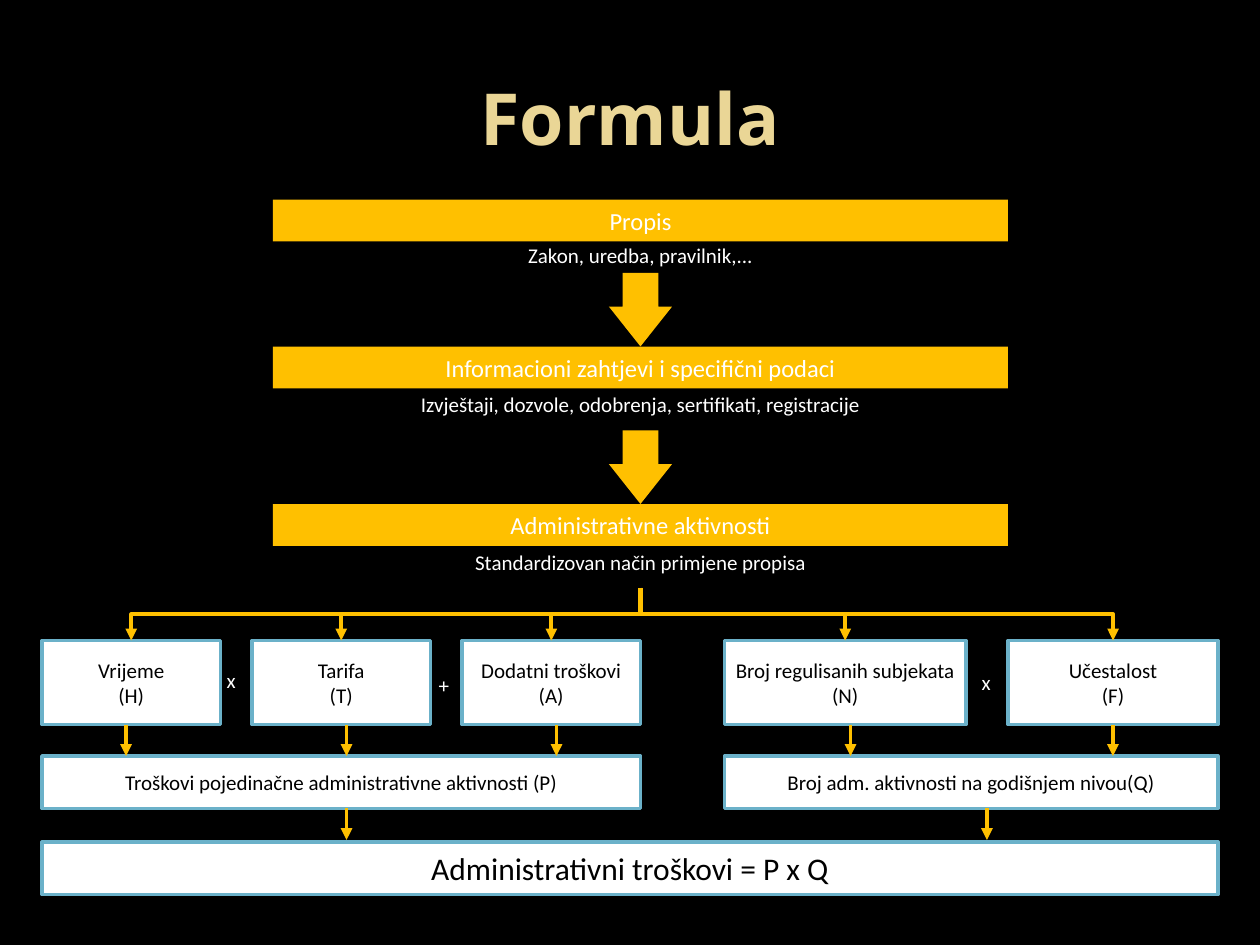
import pptx
import pptx.util
import pptx.oxml
import pptx.oxml.ns
from pptx.dml.color import RGBColor
from pptx.enum.shapes import MSO_CONNECTOR, MSO_SHAPE
from pptx.enum.text import MSO_ANCHOR, PP_ALIGN

BLACK = RGBColor(0x00, 0x00, 0x00)
WHITE = RGBColor(0xFF, 0xFF, 0xFF)
AMBER = RGBColor(0xFF, 0xC0, 0x00)
BLUE = RGBColor(0x6B, 0xB1, 0xC9)
SAND = RGBColor(0xEA, 0xD6, 0x96)

# Content; places are columns and rows of a 120 by 90 grid
COLUMNS, ROWS = 120, 90
TITLE = "Formula"
BAR_LEFT, BAR_WIDTH, BAR_HEIGHT = 26, 70, 4
STEPS = [  # heading, row, caption, caption row, caption height
    ("Propis", 19, "Zakon, uredba, pravilnik,...", 22, 4.5),
    ("Informacioni zahtjevi i specifični podaci", 33,
     "Izvještaji, dozvole, odobrenja, sertifikati, registracije", 36, 5),
    ("Administrativne aktivnosti", 48,
     "Standardizovan način primjene propisa", 51, 5),
]
FACTOR_TOP, FACTOR_HEIGHT = 61, 8
FACTORS = [  # text, column, width, column of the arrow below
    ("Vrijeme\n(H)", 4, 17, 12),
    ("Tarifa\n(T)", 24, 17, 33),
    ("Dodatni troškovi\n(A)", 44, 17, 53),
    ("Broj regulisanih subjekata\n(N)", 69, 23, 81),
    ("Učestalost\n(F)", 96, 20, 106),
]
OPERATORS = [("x", 20.4, 63), ("+", 40.6, 63.5), ("x", 92.3, 63.2)]
RESULT_TOP, RESULT_HEIGHT = 72, 5
RESULTS = [  # text, column, width, column of the arrow below
    ("Troškovi pojedinačne administrativne aktivnosti (P)", 4, 57, 33),
    ("Broj adm. aktivnosti na godišnjem nivou(Q)", 69, 47, 94),
]
TOTAL, TOTAL_TOP = "Administrativni troškovi = P x Q", 80.2
TRUNK, TRUNK_TOP = BAR_LEFT + BAR_WIDTH / 2, 56

deck = pptx.Presentation()
deck.slide_width = pptx.util.Inches(10)
deck.slide_height = pptx.util.Inches(7.5)
slide = deck.slides.add_slide(deck.slide_layouts[6])
slide.background.fill.solid()
slide.background.fill.fore_color.rgb = BLACK


def place(*lengths):
    """Turn alternating columns and rows into slide lengths."""
    sizes = (deck.slide_width / COLUMNS, deck.slide_height / ROWS)
    return [round(n * sizes[i % 2]) for i, n in enumerate(lengths)]


def write(shape, text, size, color, font="Calibri", bold=False,
          align=PP_ALIGN.CENTER, anchor=MSO_ANCHOR.MIDDLE, wrap=False):
    frame = shape.text_frame
    frame.text = text
    frame.word_wrap = wrap
    frame.vertical_anchor = anchor
    style = {"size": pptx.util.Pt(size), "name": font, "bold": bold}
    for paragraph in frame.paragraphs:
        paragraph.alignment = align
        for run in paragraph.runs:
            for key, value in style.items():
                setattr(run.font, key, value)
            run.font.color.rgb = color


def label(area, text, size, color=WHITE, **options):
    write(slide.shapes.add_textbox(*place(*area)), text, size, color, **options)


def block(area, fill, kind=MSO_SHAPE.RECTANGLE, border=None):
    shape = slide.shapes.add_shape(kind, *place(*area))
    shape.shadow.inherit = False
    shape.fill.solid()
    shape.fill.fore_color.rgb = fill
    if border is None:
        shape.line.fill.background()
    else:
        shape.line.color.rgb = border
        shape.line.width = pptx.util.Pt(2)
    return shape


def white_box(area, text, size=12):
    write(block(area, WHITE, border=BLUE), text, size, BLACK)


def arrow(kind, *ends):
    connector = slide.shapes.add_connector(kind, *place(*ends))
    connector.line.color.rgb = AMBER
    connector.line.width = pptx.util.Pt(2.25)
    properties = connector._element.spPr
    head = pptx.oxml.parse_xml(
        f'<a:tailEnd {pptx.oxml.ns.nsdecls("a")} type="triangle"/>')
    properties.find(pptx.oxml.ns.qn("a:ln")).append(head)
    properties.append(pptx.oxml.parse_xml(
        f'<a:effectLst {pptx.oxml.ns.nsdecls("a")}/>'))
    return connector


def branch(target):
    """Elbow from the trunk down to a factor: a box turned by a quarter."""
    drop, span = FACTOR_TOP - TRUNK_TOP, abs(target - TRUNK)
    left = (TRUNK + target - drop) / 2
    top = (TRUNK_TOP + FACTOR_TOP - span) / 2
    elbow = arrow(MSO_CONNECTOR.ELBOW, left, top, left + drop, top + span)
    frame = elbow._element.spPr.find(pptx.oxml.ns.qn("a:xfrm"))
    if target < TRUNK:
        frame.set("rot", str(90 * 60000))
    else:
        frame.set("rot", str(270 * 60000))
        frame.set("flipH", "1")


# Title
label((6, 3.6, 108, 15), TITLE, 41, SAND, font="Noto Sans", bold=True, wrap=True)

# Steps: captions lie behind the bars
for heading, row, caption, caption_row, caption_height in STEPS:
    label((BAR_LEFT, caption_row, BAR_WIDTH, caption_height), caption, 12)
    bar = block((BAR_LEFT, row, BAR_WIDTH, BAR_HEIGHT), AMBER)
    write(bar, heading, 14, WHITE)

# Block arrows end on the second and third bars
for _, row, *_ in STEPS[1:]:
    down = block((TRUNK - 3, row - 7, 6, 7), AMBER, MSO_SHAPE.DOWN_ARROW)
    down.adjustments[0], down.adjustments[1] = 0.57, 0.63

# Factors, results and total
for text, left, width, _ in FACTORS:
    white_box((left, FACTOR_TOP, width, FACTOR_HEIGHT), text)
for text, left, width, _ in RESULTS:
    white_box((left, RESULT_TOP, width, RESULT_HEIGHT), text)
white_box((4, TOTAL_TOP, 112, RESULT_HEIGHT), TOTAL, 18)

# Arrows
for _, left, width, _ in FACTORS:
    branch(left + width / 2)
for boxes, bottom in ((FACTORS, FACTOR_TOP + FACTOR_HEIGHT),
                      (RESULTS, RESULT_TOP + RESULT_HEIGHT)):
    for *_, column in boxes:
        arrow(MSO_CONNECTOR.STRAIGHT, column, bottom, column, bottom + 3)

# Operators between the factors
for sign, left, top in OPERATORS:
    label((left, top, 4.7, 3.6), sign, 12, align=PP_ALIGN.LEFT,
          anchor=MSO_ANCHOR.TOP, wrap=True)

deck.save("out.pptx")
